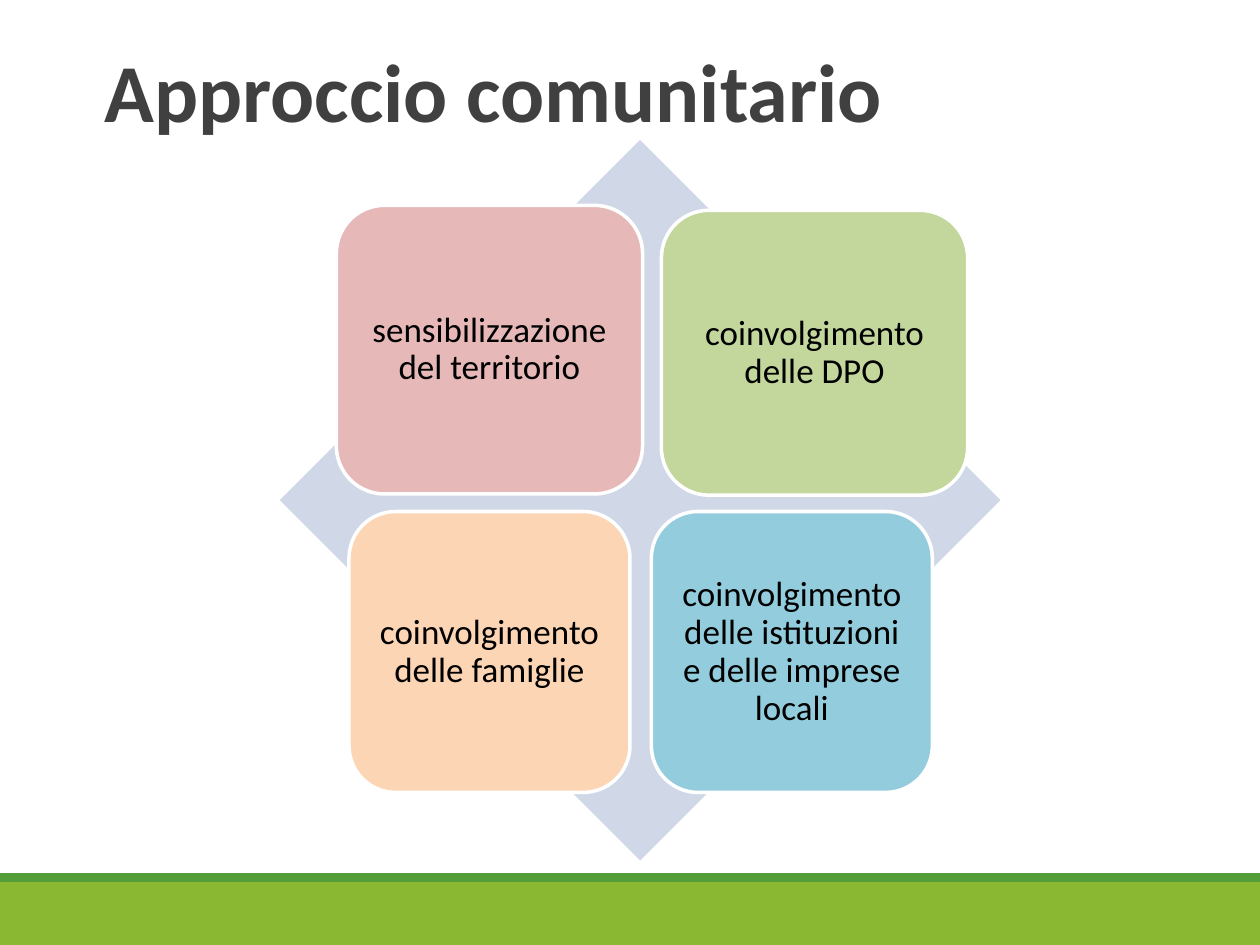
from pptx import Presentation
from pptx.dml.color import RGBColor
from pptx.enum.shapes import MSO_SHAPE as Shape
from pptx.enum.text import MSO_ANCHOR as Anchor, MSO_AUTO_SIZE as Fit, PP_ALIGN as Align
from pptx.util import Inches, Pt

CARDS = [
    ("sensibilizzazione del territorio", "E6B9B8", (2.67, 1.63, 2.43, 2.29)),
    ("coinvolgimento delle DPO", "C3D69B", (5.25, 1.67, 2.43, 2.26)),
    ("coinvolgimento delle famiglie", "FCD5B5", (2.77, 4.06, 2.23, 2.23)),
    ("coinvolgimento delle istituzioni e delle imprese locali", "93CDDD",
     (5.17, 4.06, 2.23, 2.23)),
]


def color(code):
    """Turn a hex string into a colour."""
    return RGBColor.from_string(code)


def add_form(slide, kind, box, fill):
    """Add a plain filled shape without line or shadow."""
    form = slide.shapes.add_shape(kind, *map(Inches, box))
    form.shadow.inherit = False
    form.fill.solid()
    form.fill.fore_color.rgb = color(fill)
    form.line.fill.background()
    return form


def set_text(frame, text, size, tint, align, anchor, inset, bold=False):
    """Write one formatted run into a text frame."""
    frame.word_wrap = True
    frame.auto_size = Fit.NONE
    frame.vertical_anchor = anchor
    frame.margin_left = frame.margin_right = Inches(inset)
    frame.margin_top = frame.margin_bottom = Inches(inset)
    para = frame.paragraphs[0]
    para.alignment = align
    run = para.add_run()
    run.text = text
    run.font.name = "Calibri"
    run.font.size = Pt(size)
    run.font.bold = bold
    run.font.color.rgb = color(tint)
    return para


def add_title(slide, text):
    """Place and fill the title placeholder."""
    title = slide.shapes.title
    title.left, title.top = Inches(0.83), Inches(0.32)
    title.width, title.height = Inches(8.34), Inches(0.79)
    set_text(title.text_frame, text, 47, "404040", Align.LEFT, Anchor.TOP, 0, True)


def add_card(slide, text, fill, box):
    """Add a rounded card with a white edge and centred text."""
    card = add_form(slide, Shape.ROUNDED_RECTANGLE, box, fill)
    card.line.color.rgb = color("FFFFFF")
    card.line.width = Pt(2)
    para = set_text(card.text_frame, text, 20, "000000", Align.CENTER, Anchor.MIDDLE, 0.08)
    para.line_spacing = 0.9


def main():
    """Build and save the slide."""
    deck = Presentation()
    deck.slide_width, deck.slide_height = Inches(10), Inches(7.5)
    slide = deck.slides.add_slide(deck.slide_layouts[5])
    add_form(slide, Shape.RECTANGLE, (0, 7, 10, 0.5), "8AB833")
    add_form(slide, Shape.RECTANGLE, (0, 6.93, 10, 0.07), "549E39")
    add_title(slide, "Approccio comunitario")
    add_form(slide, Shape.DIAMOND, (2.22, 1.11, 5.72, 5.72), "D0D8E8")
    for text, fill, box in CARDS:
        add_card(slide, text, fill, box)
    deck.save("out.pptx")


if __name__ == "__main__":
    main()
